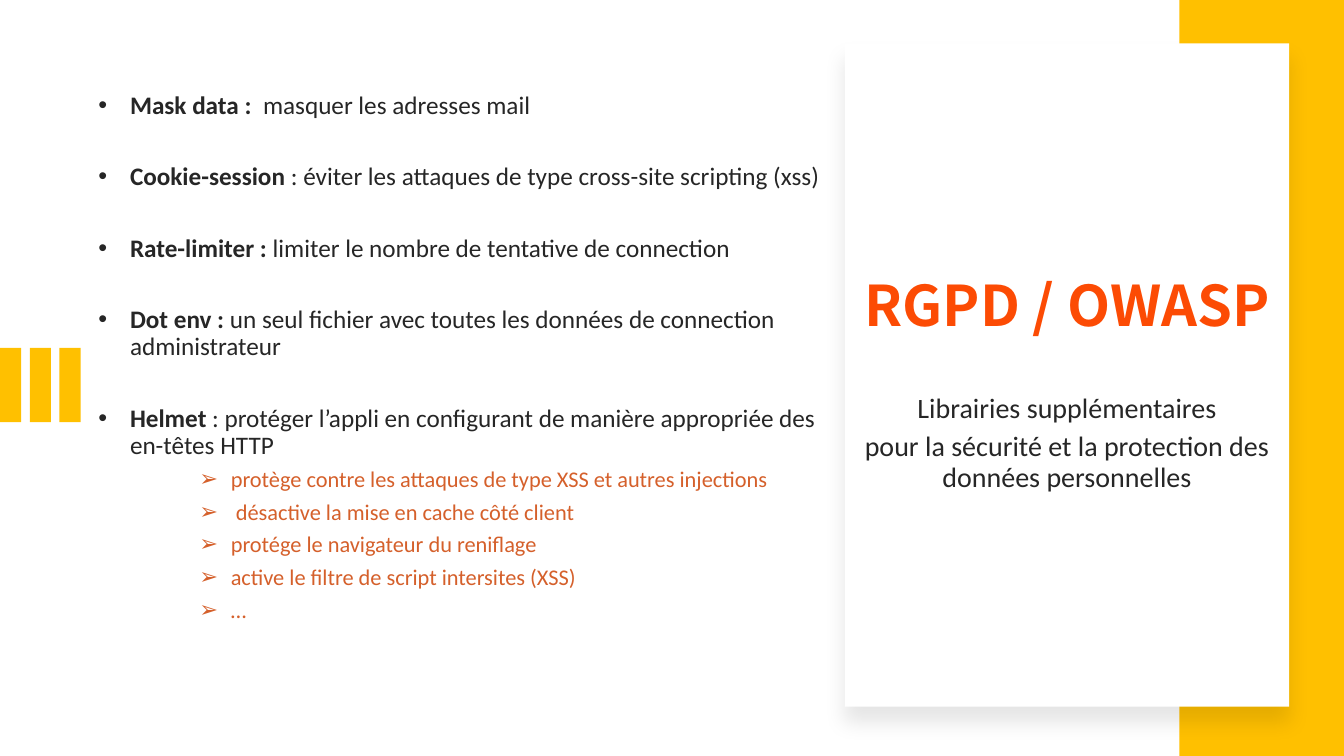
from lxml.etree import SubElement
from pptx import Presentation
from pptx.dml.color import RGBColor
from pptx.enum.shapes import MSO_SHAPE as Shape
from pptx.enum.text import MSO_ANCHOR as Anchor, MSO_AUTO_SIZE as Fit, PP_ALIGN as Align
from pptx.oxml.ns import qn
from pptx.util import Pt

GOLD = RGBColor(0xFF, 0xC0, 0x00)
WHITE = RGBColor(0xFF, 0xFF, 0xFF)
INK = RGBColor(0x26, 0x26, 0x26)
RED = RGBColor(0xFC, 0x4B, 0x04)
RUST = RGBColor(0xD5, 0x60, 0x2B)

TOOLS = [
    ("Mask data :", "  masquer les adresses mail"),
    ("Cookie-session", " : éviter les attaques de type cross-site scripting (xss)"),
    ("Rate-limiter :", " limiter le nombre de tentative de connection"),
    ("Dot env :", " un seul fichier avec toutes les données de connection administrateur"),
    ("Helmet", " : protéger l’appli en configurant de manière appropriée des en-têtes HTTP"),
]
PERKS = [
    "protège contre les attaques de type XSS et autres injections",
    " désactive la mise en cache côté client",
    "protége le navigateur du reniflage",
    "active le filtre de script intersites (XSS)",
    "…",
]
NOTES = [
    "Librairies supplémentaires",
    "pour la sécurité et la protection des données personnelles",
]


def add_rect(slide, x, y, w, h, color):
    """Add a plain filled rectangle."""
    rect = slide.shapes.add_shape(Shape.RECTANGLE, Pt(x), Pt(y), Pt(w), Pt(h))
    rect.shadow.inherit = False
    rect.fill.solid()
    rect.fill.fore_color.rgb = color
    rect.line.fill.background()
    return rect


def add_shade(shape):
    """Give a shape a soft shadow below it."""
    shape.shadow.inherit = False
    effects = shape.element.spPr.find(qn("a:effectLst"))
    shade = SubElement(effects, qn("a:outerShdw"), blurRad=str(Pt(15)),
                       dist=str(Pt(11)), dir="5400000", algn="t", rotWithShape="0")
    black = SubElement(shade, qn("a:srgbClr"), val="000000")
    SubElement(black, qn("a:alpha"), val="10000")


def add_text(slide, x, y, w, h):
    """Add a wrapping text box and return its frame."""
    frame = slide.shapes.add_textbox(Pt(x), Pt(y), Pt(w), Pt(h)).text_frame
    frame.word_wrap = True
    return frame


def next_para(frame):
    """Return the empty first paragraph or a new one."""
    first = frame.paragraphs[0]
    return frame.add_paragraph() if first.runs else first


def set_style(para, size, color, after=6, name="Calibri", bold=False):
    """Set the spacing and font of a paragraph."""
    para.line_spacing = 0.9
    para.space_before = Pt(0)
    para.space_after = Pt(after)
    font = para.font
    font.size, font.name = Pt(size), name
    if bold:
        font.bold = True
    font.color.rgb = color


def set_bullet(para, mark, left, color):
    """Hang a coloured bullet in front of a paragraph."""
    props = para._p.get_or_add_pPr()
    props.set("marL", str(Pt(left)))
    props.set("indent", str(Pt(-22.5)))
    tint = SubElement(props, qn("a:buClr"))
    SubElement(tint, qn("a:srgbClr"), val=str(color))
    SubElement(props, qn("a:buFont"), typeface="Arial")
    SubElement(props, qn("a:buChar"), char=mark)


def add_bars(slide, x, y, w, h):
    """Draw three equal bars across the box."""
    wide = 15.1
    step = (w - wide) / 2
    for i in range(3):
        add_rect(slide, x + i * step, y, wide, h, GOLD)


def add_card(slide, x, y, w, h):
    """Draw the white card with the title and its notes."""
    add_shade(add_rect(slide, x, y, w, h, WHITE))
    title = slide.shapes.title
    title.element.getparent().append(title.element)
    title.left, title.top, title.width, title.height = Pt(x), Pt(y + 167.5), Pt(w), Pt(52)
    frame = title.text_frame
    frame.text = "RGPD / OWASP"
    frame.word_wrap, frame.auto_size = True, Fit.NONE
    frame.vertical_anchor = Anchor.TOP
    frame.margin_top = frame.margin_bottom = 0
    para = frame.paragraphs[0]
    para.alignment = Align.CENTER
    set_style(para, 40, RED, 0, "Noto Sans CJK KR", True)

    frame = add_text(slide, x, y + 250.5, w, 80)
    frame.margin_top = 0
    for note in NOTES:
        para = next_para(frame)
        para.add_run().text = note
        para.alignment = Align.CENTER
        set_style(para, 20, INK)


def add_list(slide, x, y, w, h):
    """Write the libraries and what the last one does."""
    frame = add_text(slide, x, y, w, h)
    frame.margin_top = Pt(35)
    for name, use in TOOLS:
        para = next_para(frame)
        set_bullet(para, "•", 22.5, INK)
        head = para.add_run()
        head.text = name
        head.font.bold = True
        para.add_run().text = use
        set_style(para, 18, INK, 6 if name == TOOLS[-1][0] else 31.6)
    for perk in PERKS:
        para = next_para(frame)
        para.level = 2
        set_bullet(para, "➢", 94.5, RUST)
        para.add_run().text = perk
        set_style(para, 16, RUST)


def main():
    """Build and save the slide."""
    deck = Presentation()
    deck.slide_width, deck.slide_height = Pt(960), Pt(540)
    slide = deck.slides.add_slide(deck.slide_layouts[5])
    add_bars(slide, 0, 248.4, 57.6, 53.2)
    add_rect(slide, 842.4, 0, 117.6, 540, GOLD)
    add_card(slide, 603.4, 31, 317.5, 473.8)
    add_list(slide, 63.3, 31, 540.5, 473.8)
    deck.save("out.pptx")


if __name__ == "__main__":
    main()
